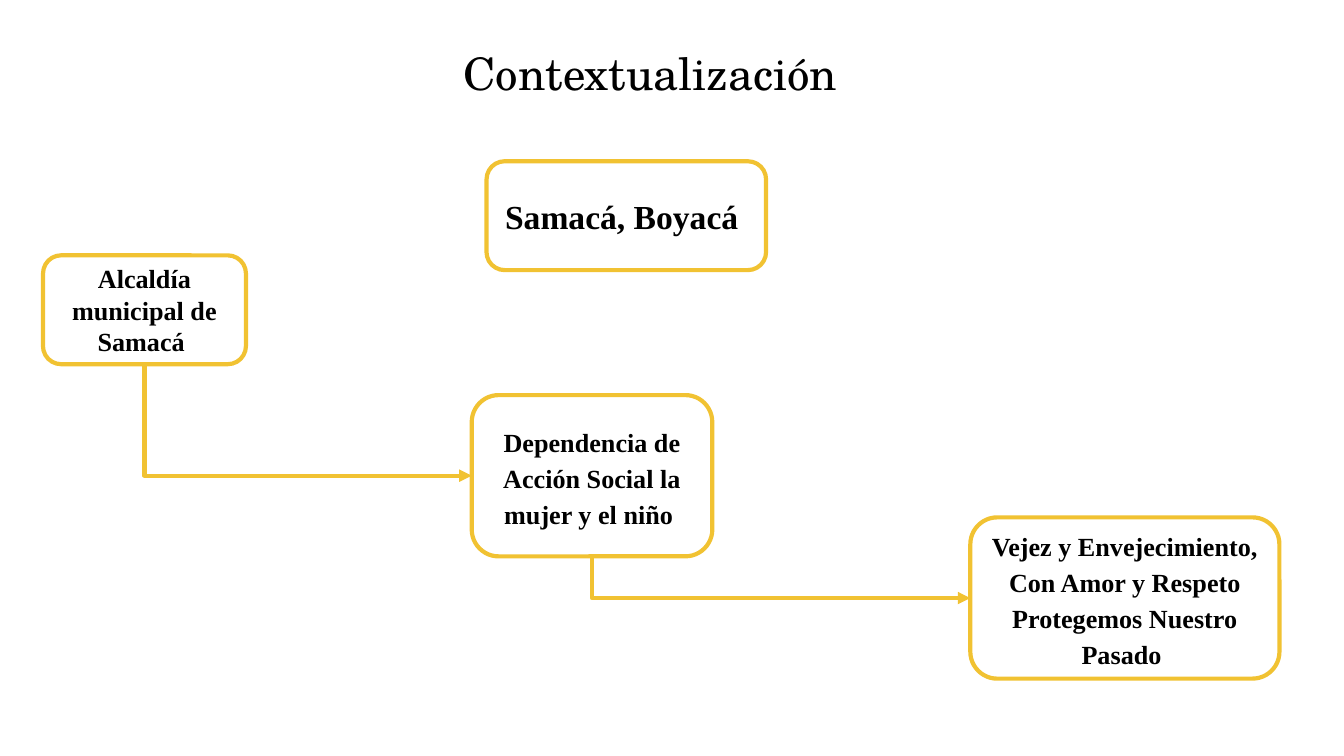
from typing import NamedTuple

import pptx
import pptx.dml.color
import pptx.enum.shapes
import pptx.enum.text
import pptx.oxml.ns
import pptx.util
from lxml import etree
from pptx.util import Inches

BLACK = pptx.dml.color.RGBColor(0x00, 0x00, 0x00)
GOLD = pptx.dml.color.RGBColor(0xF1, 0xC2, 0x32)
LINE_WIDTH = pptx.util.Pt(2.25)
LEFT_SITE, BOTTOM_SITE = 1, 2
qn = pptx.oxml.ns.qn


class Box(NamedTuple):
    left: float
    top: float
    width: float
    height: float
    text: str
    size: int = 14
    centred: bool = True
    spacing: float = 1.0


PLACE = Box(3.62, 1.2, 2.08, 0.81, "Samacá, Boyacá", size=18, centred=False)
TOWN_HALL = Box(0.32, 1.9, 1.51, 0.81, "Alcaldía municipal de Samacá ")
OFFICE = Box(3.51, 2.94, 1.79, 1.2,
             "Dependencia de Acción Social la mujer y el niño ", spacing=1.15)
PROGRAMME = Box(7.22, 3.85, 2.3, 1.2,
                "Vejez y Envejecimiento, Con Amor y Respeto Protegemos Nuestro Pasado ",
                spacing=1.15)


def write(sp, text: str, font: str, size: int, bold: bool = False):
    tf = sp.text_frame
    tf.word_wrap = True
    tf.margin_left = tf.margin_right = tf.margin_top = tf.margin_bottom = Inches(0.1)
    p = tf.paragraphs[0]
    p.text = text
    p.alignment = pptx.enum.text.PP_ALIGN.LEFT
    r = p.runs[0]
    r.font.name = font
    r.font.size = pptx.util.Pt(size)
    r.font.bold = bold
    r.font.color.rgb = BLACK
    return p


def add_box(s, box: Box):
    sp = s.shapes.add_shape(pptx.enum.shapes.MSO_SHAPE.ROUNDED_RECTANGLE,
                            Inches(box.left), Inches(box.top),
                            Inches(box.width), Inches(box.height))
    sp.shadow.inherit = False
    sp.fill.background()
    sp.line.color.rgb = GOLD
    sp.line.width = LINE_WIDTH
    p = write(sp, box.text, "Times New Roman", box.size, bold=True)
    sp.text_frame.vertical_anchor = pptx.enum.text.MSO_ANCHOR.MIDDLE
    if box.centred:
        p.alignment = pptx.enum.text.PP_ALIGN.CENTER
    p.line_spacing = box.spacing
    return sp


def add_elbow(s, start, end) -> None:
    """Run down from the bottom of start, then right to the left side of end."""
    x1, y1 = start.left + start.width // 2, start.top + start.height
    x2, y2 = end.left, end.top + end.height // 2
    line = s.shapes.add_connector(pptx.enum.shapes.MSO_CONNECTOR.ELBOW, x1, y1, x2, y2)
    line.begin_connect(start, BOTTOM_SITE)
    line.end_connect(end, LEFT_SITE)

    # A one-bend connector starts sideways, so it is turned and mirrored to start downwards.
    across, down = x2 - x1, y2 - y1
    line.left, line.top = (x1 + x2 - down) // 2, (y1 + y2 - across) // 2
    line.width, line.height = down, across
    props = line._element.spPr
    xfrm = props.find(qn("a:xfrm"))
    xfrm.set("rot", str(270 * 60000))
    xfrm.set("flipH", "1")
    props.find(qn("a:prstGeom")).set("prst", "bentConnector2")

    line.line.color.rgb = GOLD
    line.line.width = LINE_WIDTH
    etree.SubElement(props.find(qn("a:ln")), qn("a:tailEnd"), type="triangle")
    etree.SubElement(props, qn("a:effectLst"))


def main() -> None:
    prs = pptx.Presentation()
    prs.slide_width = Inches(10)
    prs.slide_height = prs.slide_width * 9 // 16
    s = prs.slides.add_slide(prs.slide_layouts[6])

    title = s.shapes.add_textbox(Inches(3.35), Inches(0.24), Inches(3.05), Inches(0.63))
    write(title, "Contextualización", "TeX Gyre Schola", 24)

    add_box(s, PLACE)
    chain = [add_box(s, box) for box in (TOWN_HALL, OFFICE, PROGRAMME)]
    for start, end in zip(chain, chain[1:]):
        add_elbow(s, start, end)

    prs.save("out.pptx")


if __name__ == "__main__":
    main()
